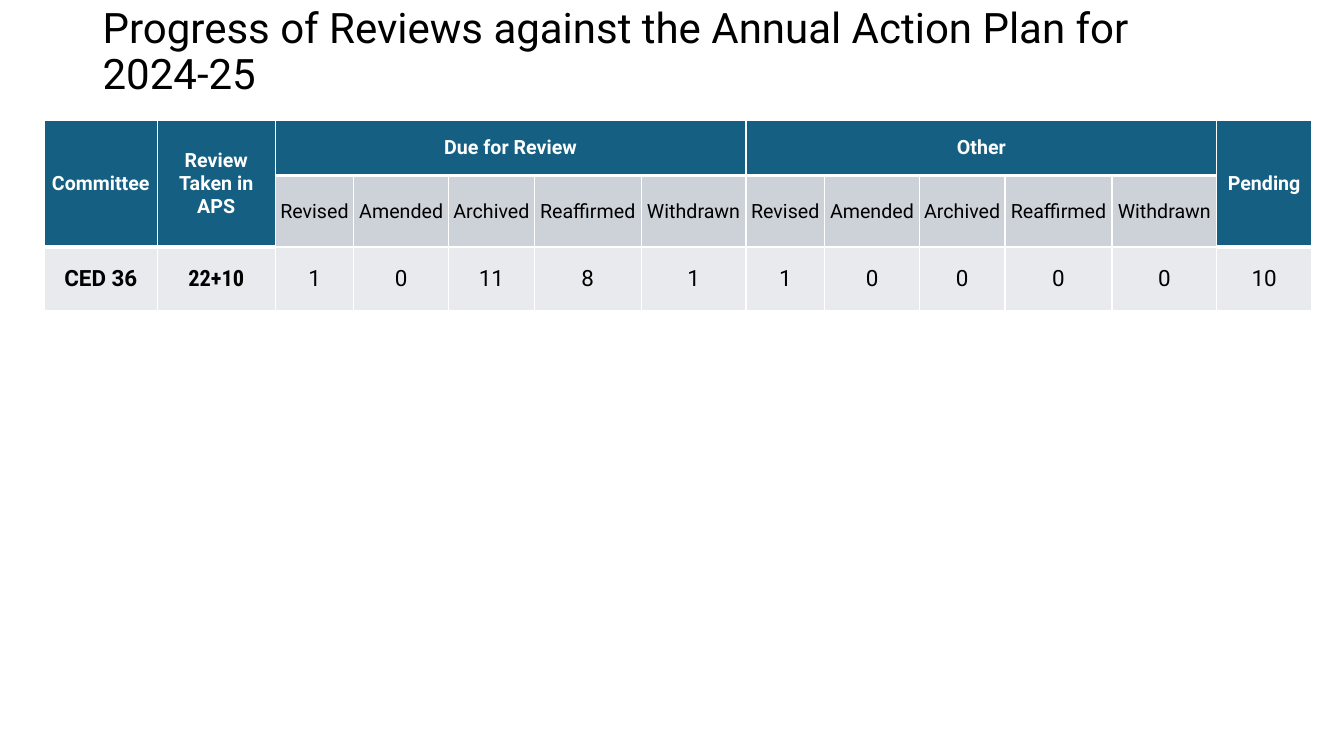
import pptx
import pptx.dml.color
import pptx.enum.text
import pptx.util
from lxml import etree
from pptx.oxml.ns import qn

INCHES = pptx.util.Inches
CENTER = pptx.enum.text.PP_ALIGN.CENTER
MIDDLE = pptx.enum.text.MSO_ANCHOR.MIDDLE
WHITE, BLACK, BLUE, GRAY, PALE = "FFFFFF", "000000", "156082", "CCD2D8", "E8EAED"

HEADER = {"size": 14, "bold": True, "color": WHITE}
OUTCOME = {"size": 14, "color": BLACK}
COUNT = {"size": 16, "color": BLACK}
LABEL = COUNT | {"bold": True}

OUTCOMES = ["Revised", "Amended", "Archived", "Reaffirmed", "Withdrawn"]
OUTCOME_WIDTHS = [0.78, 0.94, 0.85, 1.06, 1.04]
COLUMN_WIDTHS = [1.12, 1.17, *OUTCOME_WIDTHS * 2, 0.94]
ROW_HEIGHTS = [0.55, 0.55, 0.63]
HEADERS = [
    ("Committee", 0, 2, 1),
    ("Review Taken in APS", 1, 2, 1),
    ("Due for Review", 2, 1, 5),
    ("Other", 7, 1, 5),
    ("Pending", 12, 2, 1),
]
COUNTS = [1, 0, 11, 8, 1, 1, 0, 0, 0, 0, 10]


def rgb(value):
    return pptx.dml.color.RGBColor.from_string(value)


class SlideBuilder:
    """Hold the current slide and its style, and add elements to it."""

    def __init__(self, slide, font="Roboto"):
        self.slide = slide
        self.font = font

    def add_text(self, paragraph, text, style):
        run = paragraph.add_run()
        run.text = text
        formats = {
            "name": style.get("name", self.font),
            "size": pptx.util.Pt(style["size"]),
            "bold": style.get("bold", False),
        }
        for name, value in formats.items():
            setattr(run.font, name, value)
        run.font.color.rgb = rgb(style["color"])

    def title(self, text, box, style):
        shape = self.slide.shapes.add_textbox(*map(INCHES, box))
        frame = shape.text_frame
        for name, value in {"word_wrap": True, "vertical_anchor": MIDDLE}.items():
            setattr(frame, name, value)
        paragraph = frame.paragraphs[0]
        paragraph.line_spacing = 0.9
        self.add_text(paragraph, text, style)

    def table(self, left, top, widths, heights):
        box = map(INCHES, (left, top, sum(widths), sum(heights)))
        table = self.slide.shapes.add_table(len(heights), len(widths), *box).table
        for column, width in zip(table.columns, widths):
            column.width = INCHES(width)
        for row, height in zip(table.rows, heights):
            row.height = INCHES(height)
        return table

    def border(self, cell, side, points):
        properties = cell._tc.get_or_add_tcPr()
        line = etree.SubElement(properties, qn(f"a:ln{side}"), w=str(pptx.util.Pt(points)))
        fill = etree.SubElement(line, qn("a:solidFill"))
        etree.SubElement(fill, qn("a:srgbClr"), val=WHITE)

    def cell(self, table, row, column, text, style, fill, rows=1, columns=1):
        cell = table.cell(row, column)
        bottom = 3 if fill == BLUE else 1
        for covered_row in range(row, row + rows):
            for covered_column in range(column, column + columns):
                covered = table.cell(covered_row, covered_column)
                for side, points in {"L": 1, "R": 1, "T": 1, "B": bottom}.items():
                    if side != "T" or covered_row == 0:
                        self.border(covered, side, points)
                covered.fill.solid()
                covered.fill.fore_color.rgb = rgb(fill)
        if rows * columns > 1:
            cell.merge(table.cell(row + rows - 1, column + columns - 1))
        formats = {
            "margin_left": INCHES(0.01),
            "margin_top": INCHES(0.01),
            "margin_right": INCHES(0.01),
            "margin_bottom": 0,
            "vertical_anchor": MIDDLE,
        }
        for name, value in formats.items():
            setattr(cell, name, value)
        paragraph = cell.text_frame.paragraphs[0]
        paragraph.alignment = CENTER
        self.add_text(paragraph, text, style)


def main():
    presentation = pptx.Presentation()
    presentation.slide_width = INCHES(13.33)
    presentation.slide_height = INCHES(7.5)
    builder = SlideBuilder(presentation.slides.add_slide(presentation.slide_layouts[6]))

    builder.title(
        "Progress of Reviews against the Annual Action Plan for 2024-25",
        (0.92, 0.23, 11.5, 0.59),
        {"size": 30, "color": BLACK},
    )
    reviews = builder.table(0.44, 1.19, COLUMN_WIDTHS, ROW_HEIGHTS)
    for text, column, rows, columns in HEADERS:
        builder.cell(reviews, 0, column, text, HEADER, BLUE, rows, columns)
    for column, text in enumerate(OUTCOMES * 2, start=2):
        builder.cell(reviews, 1, column, text, OUTCOME, GRAY)
    builder.cell(reviews, 2, 0, "CED 36", LABEL, PALE)
    builder.cell(reviews, 2, 1, "22+10", LABEL | {"name": "Roboto Condensed"}, PALE)
    for column, count in enumerate(COUNTS, start=2):
        builder.cell(reviews, 2, column, str(count), COUNT, PALE)

    presentation.save("out.pptx")


if __name__ == "__main__":
    main()
